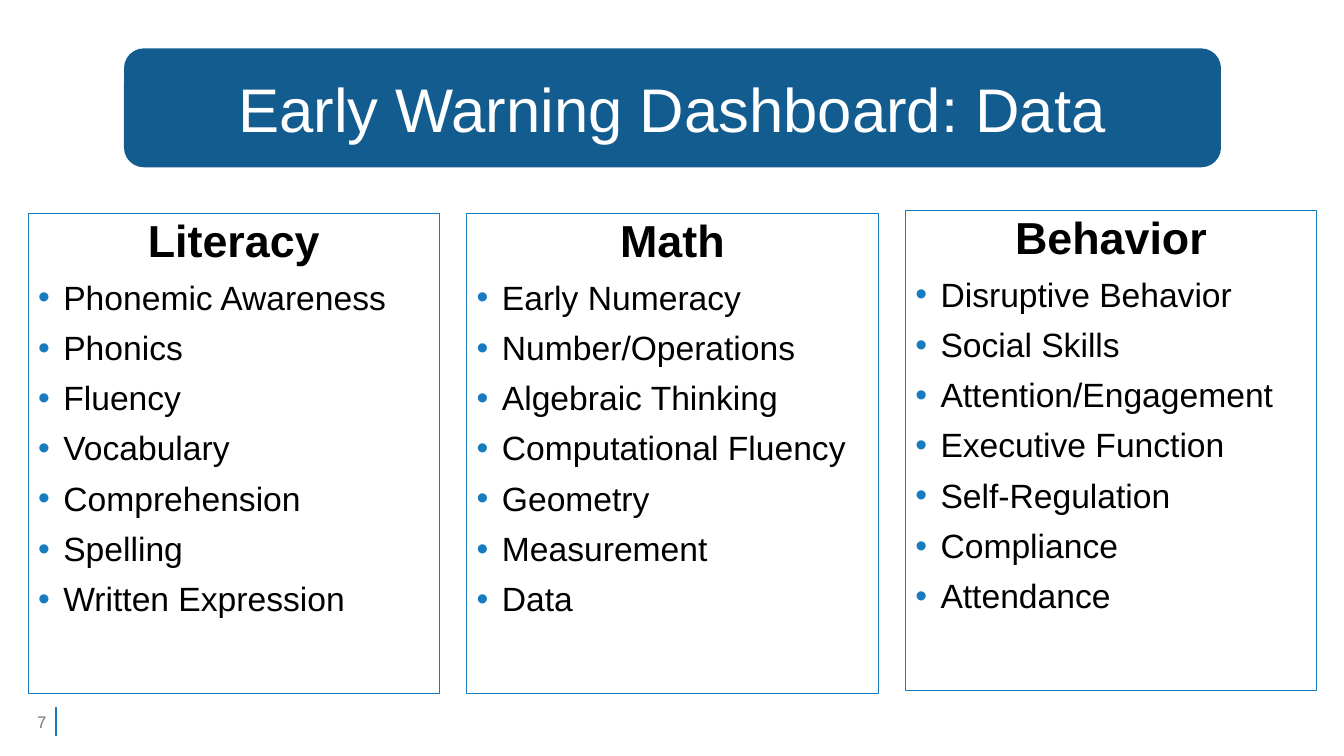
from lxml.etree import SubElement
from pptx import Presentation
from pptx.dml.color import RGBColor
from pptx.enum.shapes import MSO_CONNECTOR, MSO_SHAPE
from pptx.enum.text import MSO_ANCHOR, PP_ALIGN
from pptx.oxml.ns import qn
from pptx.util import Inches, Pt

TITLE = "Early Warning Dashboard: Data"
NUMBER = "7"
COLUMNS = [
    ("Literacy", ["Phonemic Awareness", "Phonics", "Fluency", "Vocabulary",
                  "Comprehension", "Spelling", "Written Expression"]),
    ("Math", ["Early Numeracy", "Number/Operations", "Algebraic Thinking",
              "Computational Fluency", "Geometry", "Measurement", "Data"]),
    ("Behavior", ["Disruptive Behavior", "Social Skills",
                  "Attention/Engagement", "Executive Function",
                  "Self-Regulation", "Compliance", "Attendance"]),
]
TOPS = [2.12, 2.12, 2.09]
LEFT, WIDE, HIGH, GAP = 0.28, 4.08, 4.76, 0.27
BANNER = [Inches(n) for n in (1.23, 0.48, 10.88, 1.18)]

NAVY = RGBColor(0x12, 0x5C, 0x90)
BLUE = RGBColor(0x18, 0x7B, 0xC0)
GRAY = RGBColor(0x78, 0x78, 0x78)
BLACK = RGBColor(0, 0, 0)
WHITE = RGBColor(255, 255, 255)


def style(para, size, color, align, bold=False):
    para.alignment = align
    font = para.font
    font.name, font.size, font.bold = "Arial", Pt(size), bold
    font.color.rgb = color


def add_bullet(para):
    props = para._p.get_or_add_pPr()
    props.set("marL", str(Inches(0.25)))
    props.set("indent", str(-Inches(0.25)))
    color = SubElement(props, qn("a:buClr"))
    SubElement(color, qn("a:srgbClr"), val=str(BLUE))
    SubElement(props, qn("a:buFont"), typeface="Arial")
    SubElement(props, qn("a:buChar"), char="•")


def add_title(slide):
    panel = slide.shapes.add_shape(MSO_SHAPE.ROUNDED_RECTANGLE, *BANNER)
    panel.shadow.inherit = False
    panel.fill.solid()
    panel.fill.fore_color.rgb = NAVY
    panel.line.fill.background()
    title = slide.shapes.title
    title.left, title.top, title.width, title.height = BANNER
    panel._element.addnext(title._element)
    frame = title.text_frame
    frame.text = TITLE
    frame.vertical_anchor = MSO_ANCHOR.MIDDLE
    style(frame.paragraphs[0], 44, WHITE, PP_ALIGN.CENTER)


def add_column(slide, left, top, head, items):
    box = slide.shapes.add_textbox(
        Inches(left), Inches(top), Inches(WIDE), Inches(HIGH))
    box.line.color.rgb = BLUE
    box.line.width = Pt(0.75)
    frame = box.text_frame
    frame.word_wrap = True
    first = frame.paragraphs[0]
    first.text = head
    first.line_spacing = 0.9
    style(first, 32, BLACK, PP_ALIGN.CENTER, bold=True)
    for item in items:
        para = frame.add_paragraph()
        para.text = item
        para.line_spacing = 0.9
        para.space_before = Pt(10)
        add_bullet(para)
        style(para, 24, BLACK, PP_ALIGN.LEFT)


def add_footer(slide):
    rule = slide.shapes.add_connector(
        MSO_CONNECTOR.STRAIGHT, Inches(0.56), Inches(7.01),
        Inches(0.56), Inches(7.3))
    rule.line.color.rgb = BLUE
    rule.line.width = Pt(1.5)
    SubElement(rule._element.spPr, qn("a:effectLst"))
    box = slide.shapes.add_textbox(0, Inches(6.96), Inches(0.56), Inches(0.4))
    frame = box.text_frame
    frame.word_wrap = True
    frame.vertical_anchor = MSO_ANCHOR.MIDDLE
    frame.text = NUMBER
    style(frame.paragraphs[0], 12, GRAY, PP_ALIGN.RIGHT)


def main():
    deck = Presentation()
    deck.slide_width, deck.slide_height = Inches(13.33), Inches(7.5)
    slide = deck.slides.add_slide(deck.slide_layouts[5])
    add_title(slide)
    for i, (top, (head, items)) in enumerate(zip(TOPS, COLUMNS)):
        add_column(slide, LEFT + i * (WIDE + GAP), top, head, items)
    add_footer(slide)
    deck.save("out.pptx")


if __name__ == "__main__":
    main()
